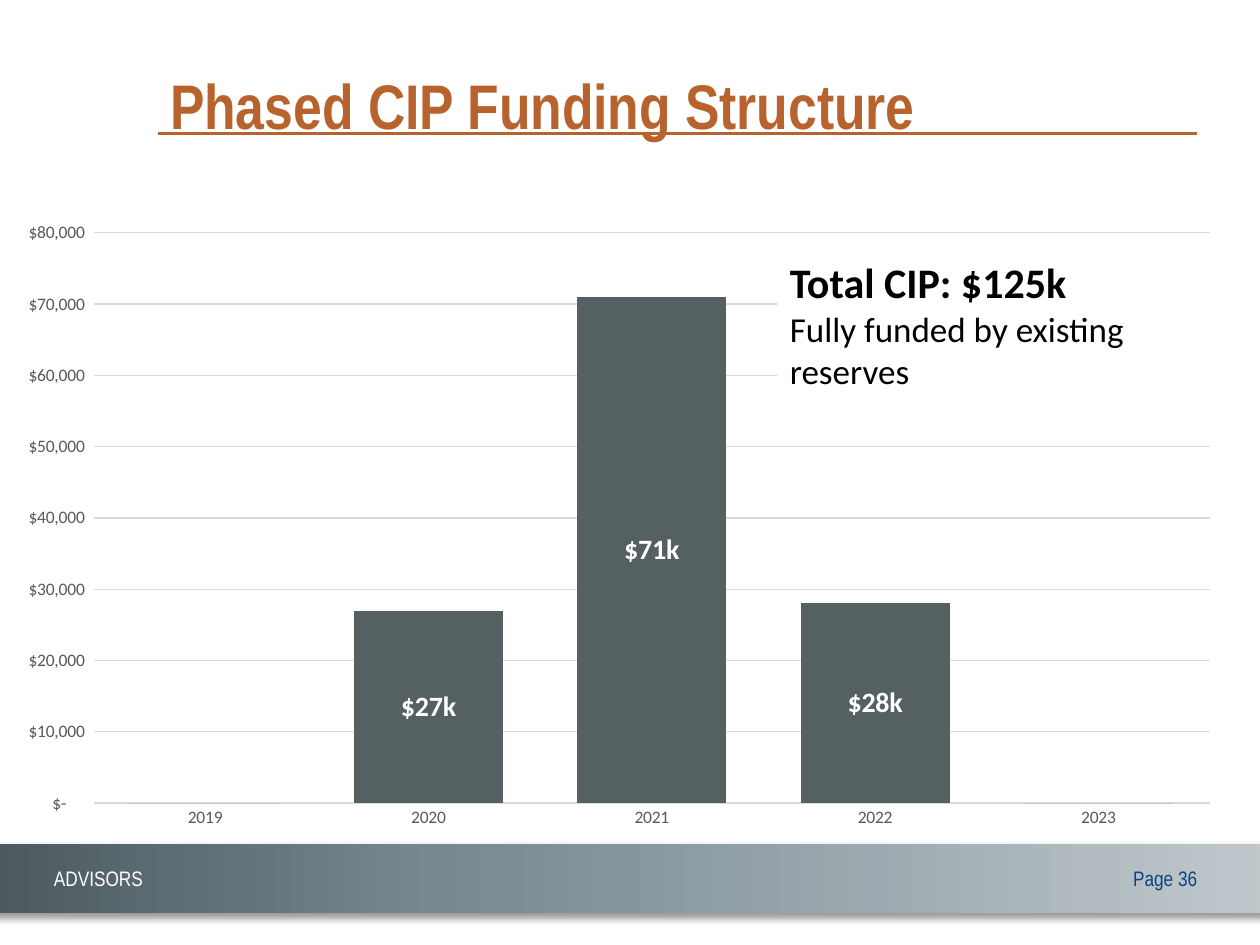
from dataclasses import dataclass

from lxml.etree import SubElement
from pptx import Presentation
from pptx.chart.data import CategoryChartData
from pptx.dml.color import RGBColor
from pptx.enum.chart import XL_CHART_TYPE as ChartType, XL_LABEL_POSITION as LabelPosition
from pptx.enum.chart import XL_TICK_MARK as TickMark
from pptx.enum.shapes import MSO_CONNECTOR as Connector, MSO_SHAPE as Shape
from pptx.enum.text import MSO_ANCHOR as Anchor, MSO_AUTO_SIZE as AutoSize, PP_ALIGN as Align
from pptx.oxml import parse_xml
from pptx.oxml.ns import nsdecls, qn
from pptx.util import Inches, Pt

RUST = RGBColor(0xB8, 0x63, 0x2E)
SLATE = RGBColor(0x55, 0x60, 0x63)
NAVY = RGBColor(0x0B, 0x45, 0x85)
WHITE = RGBColor(0xFF, 0xFF, 0xFF)
BLACK = RGBColor(0, 0, 0)
AXIS_GRAY = RGBColor(0x59, 0x59, 0x59)
GRID_GRAY = RGBColor(0xD9, 0xD9, 0xD9)
BAND_STOPS = [
    (0, RGBColor(0x4B, 0x57, 0x5D)),
    (35, RGBColor(0x77, 0x88, 0x91)),
    (100, RGBColor(0xC1, 0xC9, 0xCD)),
]
HEADING_FONT, BODY_FONT = "Arial Narrow", "Calibri"

FUNDING = {"2019": 0, "2020": 27000, "2021": 71000, "2022": 28000, "2023": 0}
AXIS_FORMAT = r'_("$"* #,##0_);_("$"* \(#,##0\);_("$"* "-"??_);_(@_)'
LABEL_FORMAT = r'"$"#,###,\k;;'  # zero values stay unlabelled


@dataclass
class FooterLabel:
    text: str
    left: float
    width: float
    color: RGBColor
    align: Align


FOOTER_LABELS = [
    FooterLabel("Page 36", 8.8, 0.8, NAVY, Align.RIGHT),
    FooterLabel("ADVISORS", 0.33, 1.42, WHITE, Align.LEFT),
]


def format_font(font, *, name: str, size: float, color: RGBColor, bold: bool = False) -> None:
    font.name, font.size, font.bold = name, Pt(size), bold
    font.color.rgb = color


def write(paragraph, text: str, *, align: Align = Align.LEFT, **style) -> None:
    paragraph.alignment = align
    run = paragraph.add_run()
    run.text = text
    format_font(run.font, **style)


def add_footer_band(shapes) -> None:
    band = shapes.add_shape(
        Shape.RECTANGLE, Inches(-0.17), Inches(6.7), Inches(10.33), Inches(0.55))
    band.line.fill.background()
    band.fill.gradient()
    band.fill.gradient_angle = 0
    stops = band.element.spPr.find(qn("a:gradFill")).find(qn("a:gsLst"))
    for stop in list(stops):
        stops.remove(stop)
    for percent, color in BAND_STOPS:
        stop = SubElement(stops, qn("a:gs"), pos=str(percent * 1000))
        SubElement(stop, qn("a:srgbClr"), val=str(color))
    band.element.spPr.append(parse_xml(
        f'<a:effectLst {nsdecls("a")}><a:outerShdw blurRad="{Pt(4)}" dist="{Pt(3)}" '
        'dir="2700000"><a:srgbClr val="000000"><a:alpha val="40000"/></a:srgbClr>'
        '</a:outerShdw></a:effectLst>'))


def add_footer_label(shapes, label: FooterLabel) -> None:
    box = shapes.add_textbox(
        Inches(label.left), Inches(6.82), Inches(label.width), Inches(0.3))
    box.text_frame.word_wrap = True
    write(box.text_frame.paragraphs[0], label.text, align=label.align,
          name=HEADING_FONT, size=12, color=label.color)


def add_title(shapes) -> None:
    title = shapes.title
    title.left, title.top = Inches(1.25), Inches(0.33)
    title.width, title.height = Inches(8.25), Inches(1)
    title.text_frame.vertical_anchor = Anchor.MIDDLE
    title.text_frame.auto_size = AutoSize.NONE
    write(title.text_frame.paragraphs[0], "Phased CIP Funding Structure",
          name=HEADING_FONT, size=36, color=RUST, bold=True)

    rule = shapes.add_connector(
        Connector.STRAIGHT, Inches(1.25), Inches(1.06), Inches(9.5), Inches(1.06))
    rule.line.color.rgb = RUST
    rule.line.width = Pt(1.5)
    SubElement(rule.element.spPr, qn("a:effectLst"))


def format_axis(axis) -> None:
    axis.major_tick_mark = axis.minor_tick_mark = TickMark.NONE
    format_font(axis.tick_labels.font, name=BODY_FONT, size=10, color=AXIS_GRAY)


def add_funding_chart(shapes) -> None:
    data = CategoryChartData()
    data.categories = list(FUNDING)
    data.add_series("Series 1", list(FUNDING.values()))
    chart = shapes.add_chart(
        ChartType.COLUMN_STACKED, Inches(0), Inches(1.67), Inches(9.8), Inches(5), data).chart
    chart.has_title = chart.has_legend = False
    format_font(chart.font, name=BODY_FONT, size=10, color=BLACK)

    # Axes and grid
    years, dollars = chart.category_axis, chart.value_axis
    for axis in (years, dollars):
        format_axis(axis)
    dollars.has_major_gridlines = True
    dollars.minimum_scale, dollars.maximum_scale, dollars.major_unit = 0, 80000, 10000
    dollars.tick_labels.number_format = AXIS_FORMAT
    dollars.tick_labels.number_format_is_linked = False
    dollars.format.line.fill.background()
    for line in (years.format.line, dollars.major_gridlines.format.line):
        line.color.rgb = GRID_GRAY
        line.width = Pt(0.75)

    # Columns and their labels
    plot = chart.plots[0]
    plot.gap_width, plot.overlap, plot.vary_by_categories = 50, 100, False
    funding = plot.series[0]
    funding.format.fill.solid()
    funding.format.fill.fore_color.rgb = SLATE
    labels = funding.data_labels
    labels.show_value = True
    labels.position = LabelPosition.CENTER
    labels.number_format = LABEL_FORMAT
    labels.number_format_is_linked = False
    format_font(labels.font, name=BODY_FONT, size=16, color=WHITE, bold=True)


def add_callout(shapes) -> None:
    callout = shapes.add_shape(
        Shape.RECTANGLE, Inches(6.17), Inches(1.99), Inches(3.67), Inches(1.18))
    callout.shadow.inherit = False
    callout.fill.solid()
    callout.fill.fore_color.rgb = WHITE
    callout.line.fill.background()
    frame = callout.text_frame
    frame.word_wrap = True
    frame.vertical_anchor = Anchor.TOP
    write(frame.paragraphs[0], "Total CIP: $125k",
          name=BODY_FONT, size=24, color=BLACK, bold=True)
    write(frame.add_paragraph(), "Fully funded by existing reserves",
          name=BODY_FONT, size=20, color=BLACK)


def main() -> None:
    deck = Presentation()
    deck.slide_width, deck.slide_height = Inches(10), Inches(7.5)
    shapes = deck.slides.add_slide(deck.slide_layouts[5]).shapes  # Title Only

    add_footer_band(shapes)
    for label in FOOTER_LABELS:
        add_footer_label(shapes, label)
    add_title(shapes)
    add_funding_chart(shapes)
    add_callout(shapes)
    deck.save("out.pptx")


if __name__ == "__main__":
    main()
